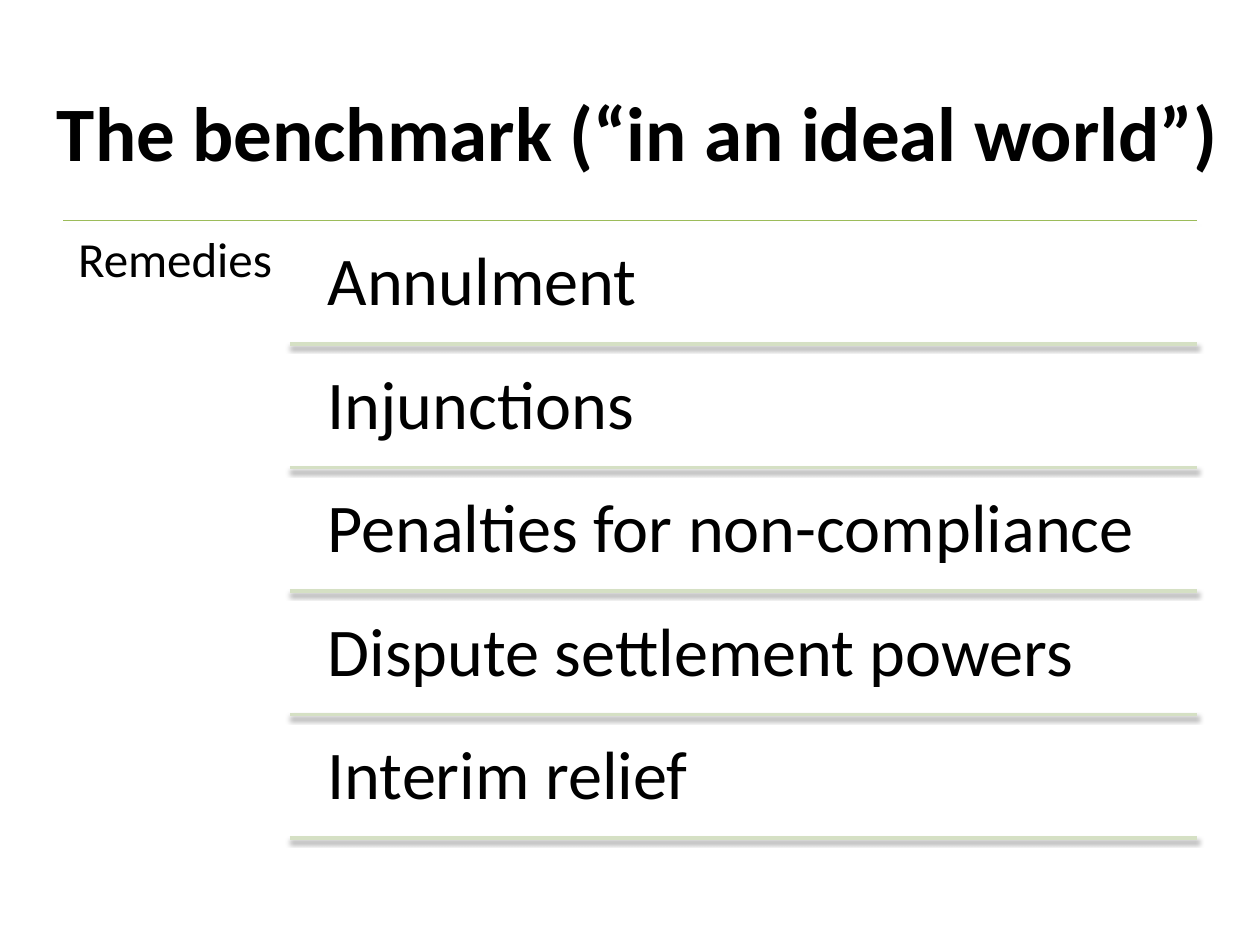
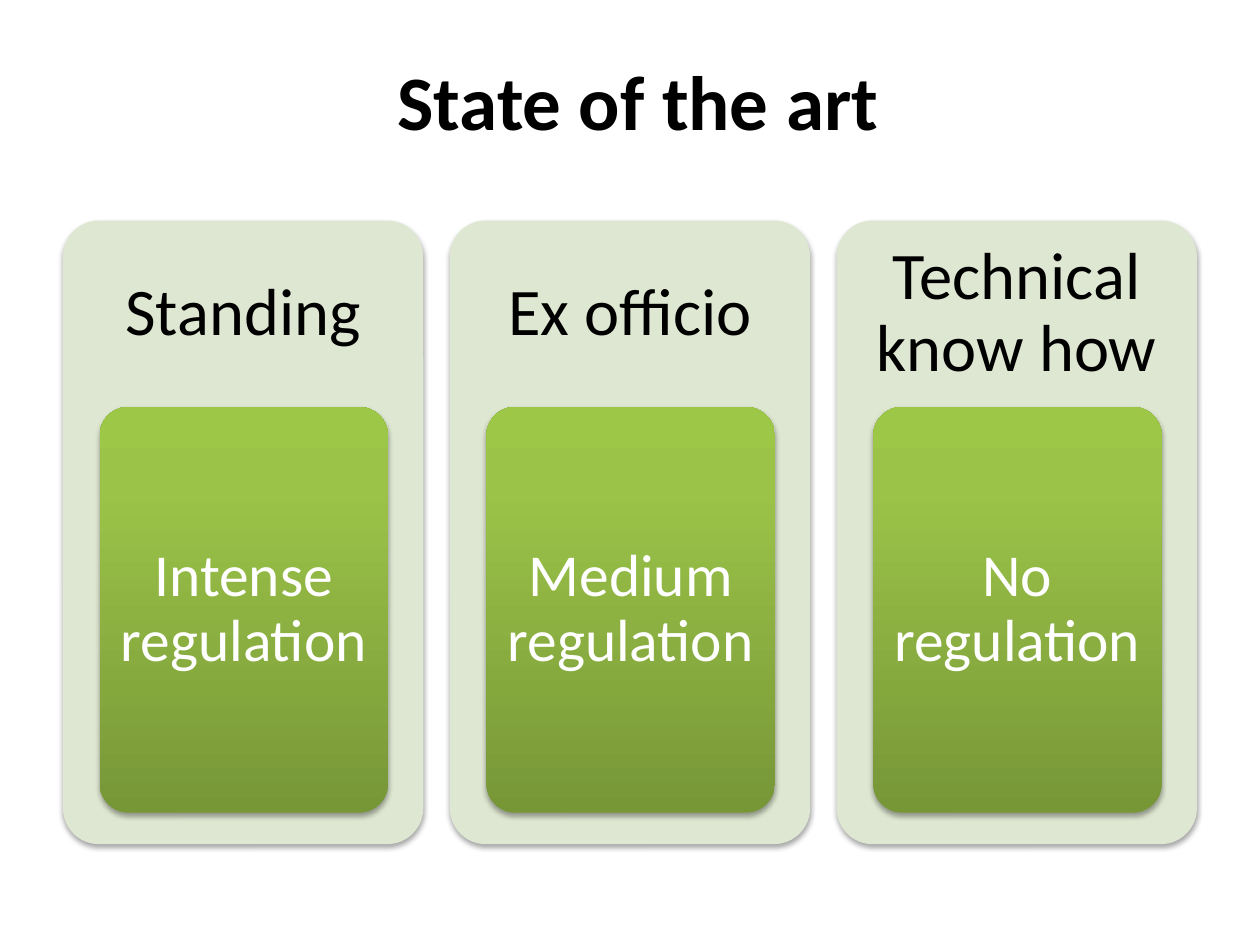
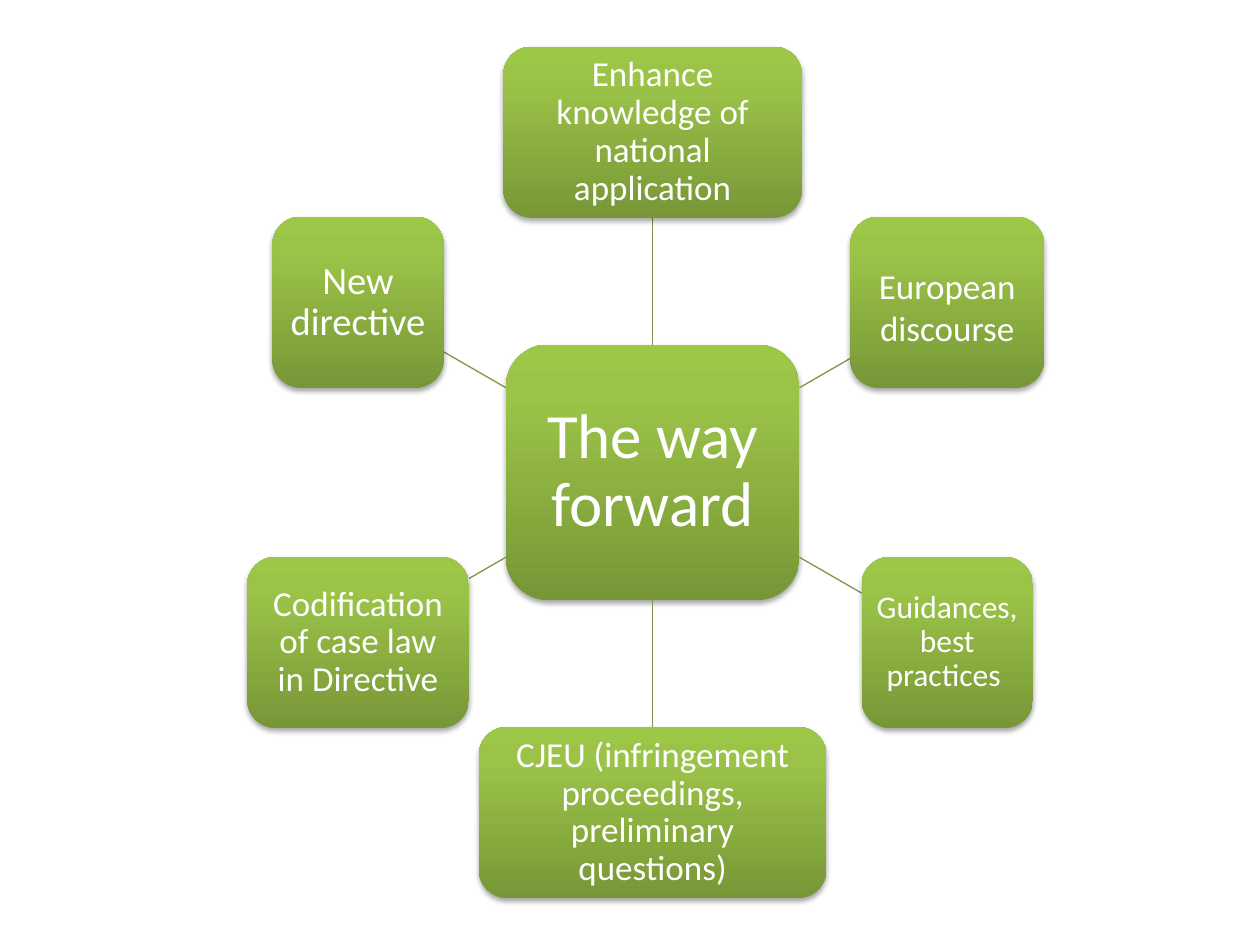
"""Build three slides on remedies, the state of the art and the way forward."""
from dataclasses import dataclass
from math import cos, radians, sin

from pptx import Presentation, util as u
from pptx.dml.color import RGBColor
from pptx.enum import shapes, text
from pptx.oxml import ns, parse_xml


@dataclass(frozen=True)
class Theme:
    font: str = "Calibri"
    ink: str = "000000"
    paper: str = "FFFFFF"
    accent: str = "9BBB59"
    rule: str = "D5E0C4"
    spoke: str = "7C9647"
    panel: str = "DEE7D1"
    gradient: tuple = ((0, "779737"), (80, "9BC348"), (100, "9DC746"))
    title: int = 44
    topic: int = 28
    remedy: int = 39
    heading: int = 38
    level: int = 34
    hub: int = 36


T = Theme()
TOP = text.MSO_ANCHOR.TOP
MIDDLE = text.MSO_ANCHOR.MIDDLE
LEFT = text.PP_ALIGN.LEFT
CENTER = text.PP_ALIGN.CENTER
ROUNDED = shapes.MSO_SHAPE.ROUNDED_RECTANGLE
STRAIGHT = shapes.MSO_CONNECTOR.STRAIGHT


def write(sp, words, size, color=T.ink, bold=False, align=CENTER, anchor=MIDDLE,
          insets=(0.1, 0.05, 0.1, 0.05), spacing=0.9):
    tf = sp.text_frame
    tf.word_wrap = True
    tf.vertical_anchor = anchor
    tf.margin_left, tf.margin_top, tf.margin_right, tf.margin_bottom = map(u.Inches, insets)
    p = tf.paragraphs[0]
    p.alignment = align
    p.line_spacing = spacing
    r = p.add_run()
    r.text = words
    r.font.name = T.font
    r.font.size = u.Pt(size)
    r.font.bold = bold
    r.font.color.rgb = RGBColor.from_string(color)


def paint(sp, fill=None, line=None, width=0.75, shadow=35, distance=1.8):
    props = sp._element.spPr
    if fill == T.gradient:
        stops = "".join(f'<a:gs pos="{at * 1000}"><a:srgbClr val="{c}"/></a:gs>' for at, c in fill)
        props[1].addnext(parse_xml(
            f'<a:gradFill {ns.nsdecls("a")} rotWithShape="1"><a:gsLst>{stops}</a:gsLst>'
            '<a:lin ang="16200000" scaled="0"/></a:gradFill>'))
    elif fill:
        sp.fill.solid()
        sp.fill.fore_color.rgb = RGBColor.from_string(fill)
    if line:
        sp.line.color.rgb = RGBColor.from_string(line)
        sp.line.width = u.Pt(width)
    else:
        sp.line.fill.background()
    effect = ""
    if shadow:
        effect = (f'<a:outerShdw blurRad="{u.Pt(3.1)}" dist="{u.Pt(distance)}" dir="5400000" '
                  f'rotWithShape="0"><a:srgbClr val="000000"><a:alpha val="{shadow * 1000}"/>'
                  '</a:srgbClr></a:outerShdw>')
    props.append(parse_xml(f'<a:effectLst {ns.nsdecls("a")}>{effect}</a:effectLst>'))


prs = Presentation()
prs.slide_width, prs.slide_height = u.Inches(10), u.Inches(7.5)
remedies, state, forward = [prs.slides.add_slide(prs.slide_layouts[6]) for _ in range(3)]

for s, title, top in ((remedies, "The benchmark (“in an ideal world”)", 0.3),
                      (state, "State of the art", 0.05)):
    sp = s.shapes.add_textbox(*map(u.Inches, (0.24, top, 9.65, 1.48)))
    write(sp, title, T.title, bold=True, spacing=1.0)

sp = remedies.shapes.add_connector(STRAIGHT, *map(u.Inches, (0.5, 1.75, 9.5, 1.75)))
paint(sp, line=T.accent)
sp = remedies.shapes.add_textbox(*map(u.Inches, (0.5, 1.75, 1.8, 4.95)))
write(sp, "Remedies", T.topic, align=LEFT, anchor=TOP, insets=(0.12,) * 4)

for i, remedy in enumerate(("Annulment", "Injunctions", "Penalties for non-compliance",
                            "Dispute settlement powers", "Interim relief")):
    y = 1.8 + 0.98 * i
    sp = remedies.shapes.add_textbox(*map(u.Inches, (2.44, y, 7.07, 0.93)))
    write(sp, remedy, T.remedy, align=LEFT, anchor=TOP, insets=(0.16,) * 4)
    sp = remedies.shapes.add_connector(STRAIGHT, *map(u.Inches, (2.3, y + 0.93, 9.5, y + 0.93)))
    paint(sp, line=T.rule, width=2, shadow=38, distance=1.6)

for i, (heading, level) in enumerate((("Standing", "Intense regulation"),
                                      ("Ex officio", "Medium regulation"),
                                      ("Technical know how", "No regulation"))):
    x = 0.5 + 3.07 * i
    sp = state.shapes.add_shape(ROUNDED, *map(u.Inches, (x, 1.75, 2.86, 4.95)))
    sp.adjustments[0] = 0.1
    paint(sp, T.panel)
    write(sp, heading, T.heading, insets=(0.08, 0.08, 0.08, 3.55))
    sp = state.shapes.add_shape(ROUNDED, *map(u.Inches, (x + 0.29, 3.23, 2.29, 3.22)))
    sp.adjustments[0] = 0.1
    paint(sp, T.gradient)
    write(sp, level, T.level, T.paper, insets=(0.09, 0.07, 0.09, 0.07))

cx, cy, radius = 5.18, 3.75, 2.7
hub_w, hub_h, node_h = 2.33, 2.03, 1.36
sp = forward.shapes.add_shape(
    ROUNDED, *map(u.Inches, (cx - hub_w / 2, cy - hub_h / 2, hub_w, hub_h)))
paint(sp, T.gradient)
write(sp, "The way forward", T.hub, T.paper, insets=(0.1,) * 4)

nodes = (
    ("Enhance knowledge of national application", 2.37, 20, {}),
    ("European discourse", 1.54, 20, {"spacing": 1.0, "insets": (0.06, 0.12, 0.06, 0.06)}),
    ("Guidances, best practices ", 1.36, 18, {"insets": (0.05,) * 4}),
    ("CJEU (infringement proceedings, preliminary questions)", 2.76, 20, {}),
    ("Codification of case law in Directive", 1.76, 20, {}),
    ("New directive", 1.36, 22, {}),
)
for i, (words, w, size, extra) in enumerate(nodes):
    angle = radians(360 / len(nodes) * i)
    dx, dy = sin(angle), -cos(angle)
    x, y = cx + radius * dx, cy + radius * dy
    start, end = [min(bw / 2 / max(abs(dx), 0.01), bh / 2 / abs(dy))
                  for bw, bh in ((hub_w, hub_h), (w, node_h))]
    sp = forward.shapes.add_connector(STRAIGHT, *map(u.Inches, (
        cx + start * dx, cy + start * dy, x - end * dx, y - end * dy)))
    paint(sp, line=T.spoke, shadow=0)
    sp = forward.shapes.add_shape(
        ROUNDED, *map(u.Inches, (x - w / 2, y - node_h / 2, w, node_h)))
    paint(sp, T.gradient)
    write(sp, words, size, T.paper, **{"insets": (0.06,) * 4, **extra})

prs.save("out.pptx")
